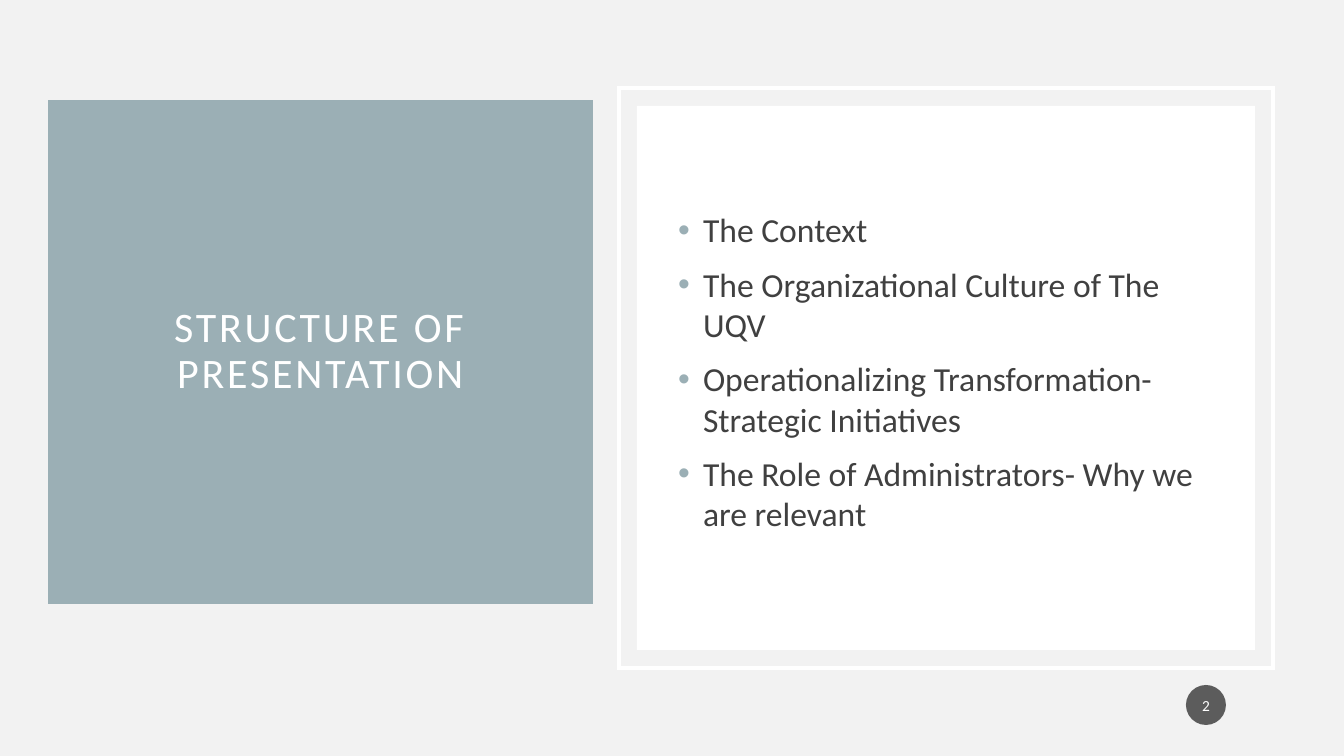
from pptx import Presentation
from pptx.dml.color import RGBColor
from pptx.enum.shapes import MSO_SHAPE
from pptx.enum.text import MSO_ANCHOR, MSO_AUTO_SIZE, PP_ALIGN
from pptx.oxml import parse_xml
from pptx.oxml.ns import nsdecls, qn
from pptx.util import Pt

RECTANGLE, OVAL = MSO_SHAPE.RECTANGLE, MSO_SHAPE.OVAL
MIDDLE, NO_FIT = MSO_ANCHOR.MIDDLE, MSO_AUTO_SIZE.NONE
CENTER, LEFT = PP_ALIGN.CENTER, PP_ALIGN.LEFT

THEME = {
    "font": "Calibri",
    "background": RGBColor(0xF2, 0xF2, 0xF2),
    "accent": RGBColor(0x9B, 0xAF, 0xB5),
    "white": RGBColor(0xFF, 0xFF, 0xFF),
    "text": RGBColor(0x40, 0x40, 0x40),
    "badge": RGBColor(0x1D, 0x1D, 0x1D),
    "title_size": 30,
    "body_size": 24,
    "number_size": 11,
}
SLIDE_W, SLIDE_H = 1344, 756
EMU_PER_PX = 12192000 / SLIDE_W

AGENDA = [
    "The Context",
    "The Organizational Culture of The UQV",
    "Operationalizing Transformation- Strategic Initiatives",
    "The Role of Administrators- Why we are relevant",
]


def px(*lengths):
    return [round(length * EMU_PER_PX) for length in lengths]


def set_text(shape, lines, size, color, align, insets):
    frame = shape.text_frame
    frame.text = "\n".join(lines)
    frame.word_wrap = True
    frame.auto_size = NO_FIT
    frame.vertical_anchor = MIDDLE
    (frame.margin_left, frame.margin_top,
     frame.margin_right, frame.margin_bottom) = px(*insets)
    for paragraph in frame.paragraphs:
        paragraph.alignment = align
        paragraph.font.name = THEME["font"]
        paragraph.font.size = Pt(THEME[size])
        paragraph.font.color.rgb = THEME[color]
    return frame.paragraphs


# Slide
presentation = Presentation()
presentation.slide_width, presentation.slide_height = px(SLIDE_W, SLIDE_H)
slide = presentation.slides.add_slide(presentation.slide_layouts[1])
slide.background.fill.solid()
slide.background.fill.fore_color.rgb = THEME["background"]
heading, agenda = slide.placeholders

# Heading block
heading.left, heading.top, heading.width, heading.height = px(48, 100, 545, 504)
heading.fill.solid()
heading.fill.fore_color.rgb = THEME["accent"]
heading_line = set_text(heading, ["STRUCTURE OF PRESENTATION"], "title_size",
                        "white", CENTER, (20, 20, 20, 20))[0]
heading_line.line_spacing = 0.9
heading_line.runs[0].font._element.set("spc", "200")

# Outlined frame around a white panel
outline = slide.shapes.add_shape(RECTANGLE, *px(619, 88, 654, 580))
outline.fill.background()
outline.line.color.rgb = THEME["white"]
outline.line.width = Pt(2.5)
outline.element.find(".//" + qn("a:ln")).append(
    parse_xml(f'<a:miter {nsdecls("a")} lim="800000"/>'))
panel = slide.shapes.add_shape(RECTANGLE, *px(637, 106, 618, 544))
panel.fill.solid()
panel.fill.fore_color.rgb = THEME["white"]
panel.line.fill.background()

# Agenda list, brought in front of the panel
slide.shapes.element.append(agenda.element)
agenda.left, agenda.top, agenda.width, agenda.height = px(668, 142, 546, 489)
indent = px(25)[0]
for item in set_text(agenda, AGENDA, "body_size", "text", LEFT, (10, 5, 10, 35)):
    item.space_before = Pt(10)
    item.line_spacing = 1.0
    properties = item._p.get_or_add_pPr()
    properties.set("marL", str(indent))
    properties.set("indent", str(-indent))
    bullet_parts = [
        f'<a:buClr {nsdecls("a")}><a:srgbClr val="{THEME["accent"]}"/></a:buClr>',
        f'<a:buFont {nsdecls("a")} typeface="Arial"/>',
        f'<a:buChar {nsdecls("a")} char="•"/>',
    ]
    defaults = properties.find(qn("a:defRPr"))
    for part in bullet_parts:
        defaults.addprevious(parse_xml(part))

# Slide number badge
badge = slide.shapes.add_shape(OVAL, *px(1186, 685, 40, 40))
badge.fill.solid()
badge.fill.fore_color.rgb = THEME["badge"]
badge.element.find(".//" + qn("a:srgbClr")).append(
    parse_xml(f'<a:alpha {nsdecls("a")} val="70000"/>'))
badge.line.fill.background()
set_text(badge, ["2"], "number_size", "white", CENTER, (2, 5, 2, 5))

for shape in (outline, panel, badge):
    shape.shadow.inherit = False

presentation.save("out.pptx")
